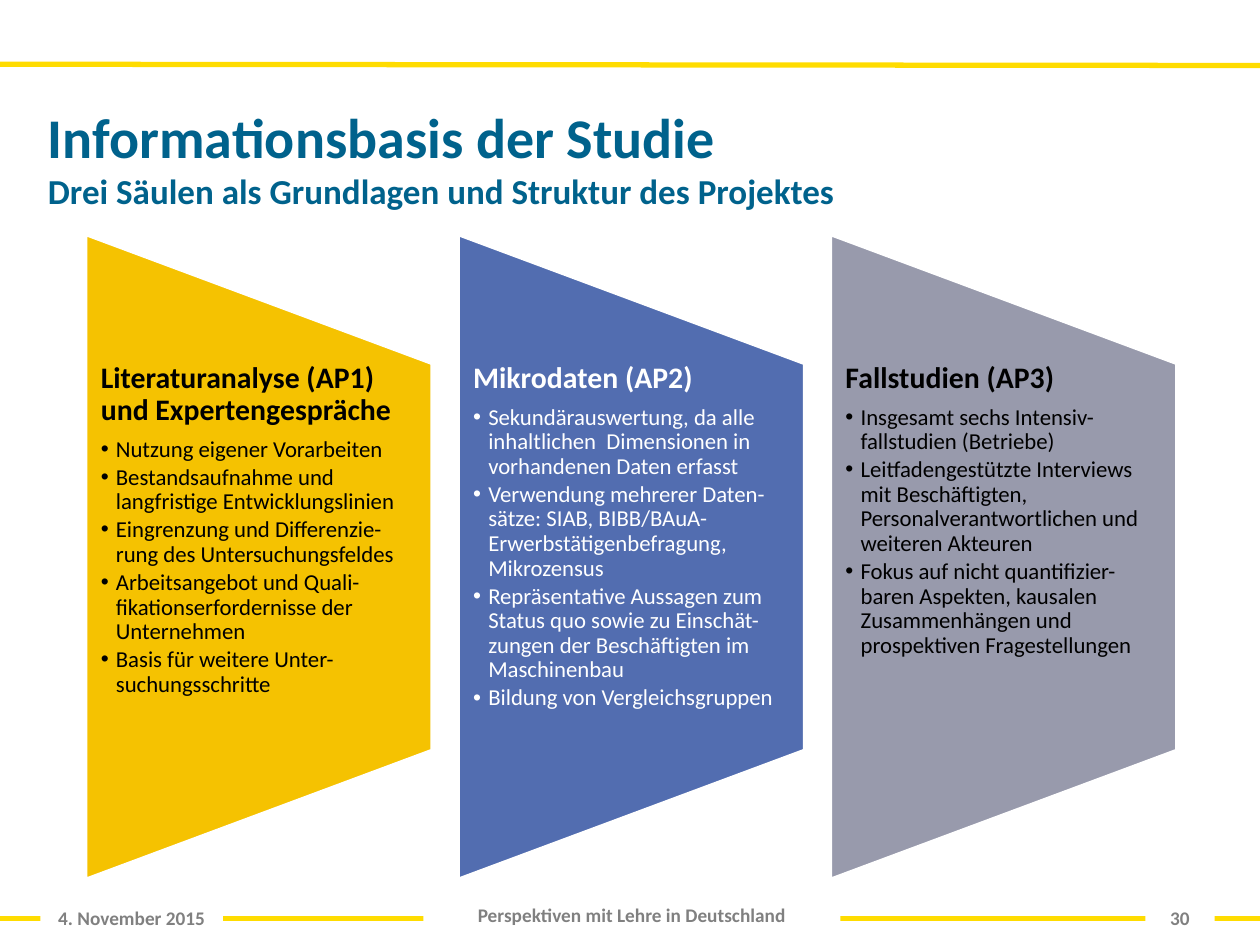
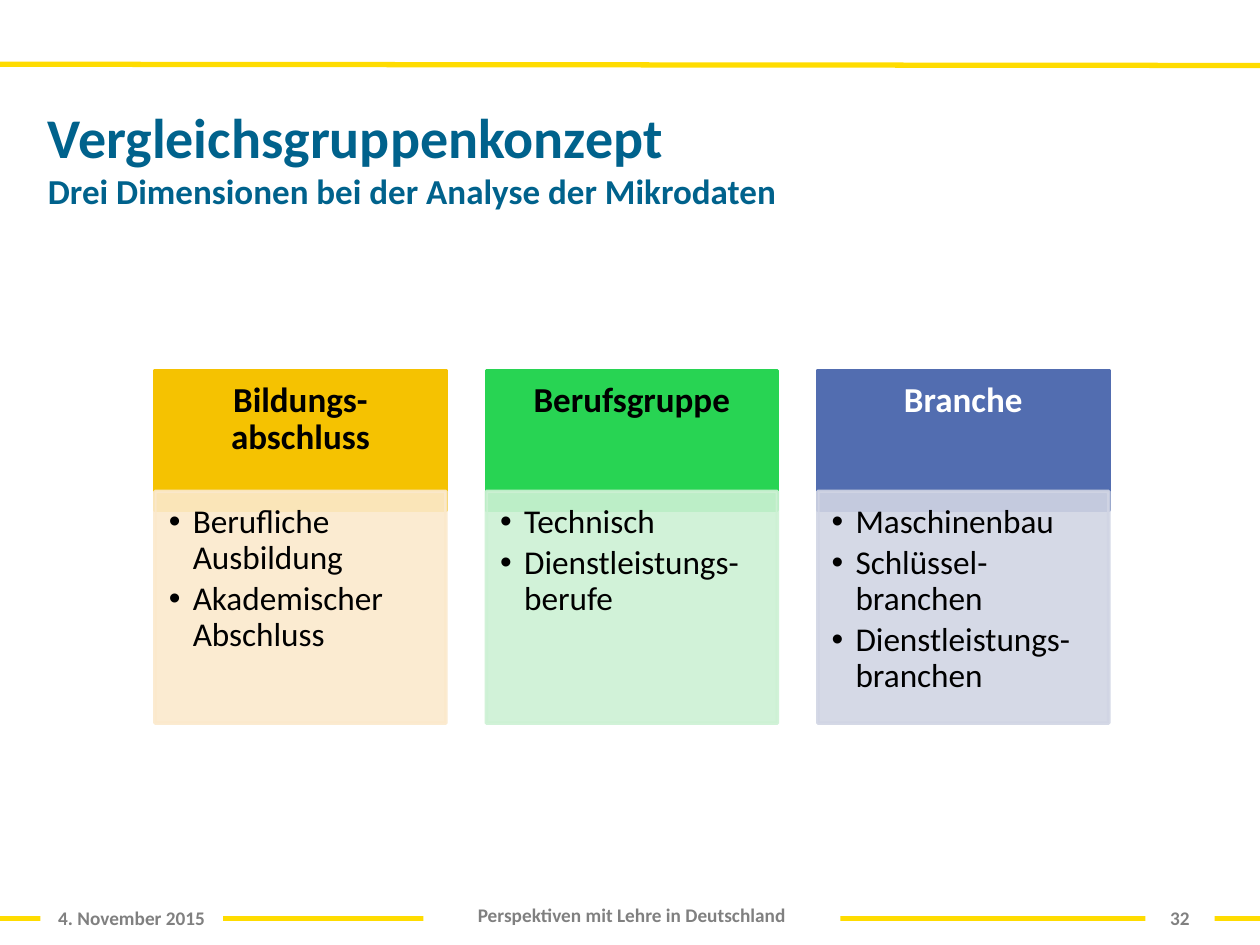
"""Build two slides on the basis and the comparison groups of a study."""
from lxml import etree
from pptx import Presentation
from pptx.dml.color import RGBColor
from pptx.enum.shapes import MSO_CONNECTOR, MSO_SHAPE
from pptx.enum.text import MSO_ANCHOR, MSO_AUTO_SIZE, PP_ALIGN
from pptx.oxml.ns import qn
from pptx.util import Inches, Pt

LEFT, CENTER = PP_ALIGN.LEFT, PP_ALIGN.CENTER
TOP = MSO_ANCHOR.TOP
NO_AUTOFIT = MSO_AUTO_SIZE.NONE
RECTANGLE = MSO_SHAPE.RECTANGLE
PILLAR = MSO_SHAPE.FLOWCHART_MANUAL_OPERATION
STRAIGHT = MSO_CONNECTOR.STRAIGHT

FONT = "Calibri"
BLACK, WHITE, GREY = "000000", "FFFFFF", "808080"
BAND, TITLE = "FFDC00", "00628C"
GOLD, BLUE, SLATE, GREEN = "F5C201", "526DB0", "989AAC", "28D453"
PALE_GOLD, PALE_GREEN, PALE_BLUE = "FBE9CC", "CDF1D4", "D1D5E4"

PILLARS = [
    ("Literaturanalyse (AP1) und Expertengespräche", GOLD, BLACK, [
        "Nutzung eigener Vorarbeiten",
        "Bestandsaufnahme und langfristige Entwicklungslinien",
        "Eingrenzung und Differenzie-rung des Untersuchungsfeldes",
        "Arbeitsangebot und Quali-fikationserfordernisse der Unternehmen",
        "Basis für weitere Unter-suchungsschritte"]),
    ("Mikrodaten (AP2)", BLUE, WHITE, [
        "Sekundärauswertung, da alle inhaltlichen  Dimensionen in vorhandenen Daten erfasst",
        "Verwendung mehrerer Daten-sätze: SIAB, BIBB/BAuA-Erwerbstätigenbefragung, Mikrozensus",
        "Repräsentative Aussagen zum Status quo sowie zu Einschät-zungen der Beschäftigten im Maschinenbau",
        "Bildung von Vergleichsgruppen"]),
    ("Fallstudien (AP3)", SLATE, BLACK, [
        "Insgesamt sechs Intensiv-fallstudien (Betriebe)",
        "Leitfadengestützte Interviews mit Beschäftigten, Personalverantwortlichen und weiteren Akteuren",
        "Fokus auf nicht quantifizier-baren Aspekten, kausalen Zusammenhängen und prospektiven Fragestellungen"]),
]
DIMENSIONS = [
    ("Bildungs-abschluss", GOLD, PALE_GOLD, BLACK,
     ["Berufliche Ausbildung", "Akademischer Abschluss"]),
    ("Berufsgruppe", GREEN, PALE_GREEN, BLACK,
     ["Technisch", "Dienstleistungs-berufe"]),
    ("Branche", BLUE, PALE_BLUE, WHITE,
     ["Maschinenbau", "Schlüssel-branchen", "Dienstleistungs-branchen"]),
]


def color(value):
    """Turn a hex string into a colour."""
    return RGBColor.from_string(value)


def style_span(span, size, ink, bold=False):
    """Set the font of one run."""
    span.font.name = FONT
    span.font.size = Pt(size)
    span.font.bold = bold
    span.font.color.rgb = color(ink)


def prepare_frame(frame, insets):
    """Make a text frame wrap from the top with left, top, right, bottom insets."""
    frame.word_wrap = True
    frame.auto_size = NO_AUTOFIT
    frame.vertical_anchor = TOP
    (frame.margin_left, frame.margin_top,
     frame.margin_right, frame.margin_bottom) = map(Inches, insets)


def style_para(para, size, ink, bold=False, align=LEFT, after=0, indent=0):
    """Format a paragraph, with a bullet when an indent is given."""
    if indent:
        props = para._p.get_or_add_pPr()
        props.set("marL", str(Inches(indent)))
        props.set("indent", str(-Inches(indent)))
        etree.SubElement(props, qn("a:buFont")).set("typeface", "Arial")
        etree.SubElement(props, qn("a:buChar")).set("char", "•")
    para.alignment = align
    if after:
        para.line_spacing = 0.9
        para.space_after = Pt(size * after)
    for span in para.runs:
        style_span(span, size, ink, bold)


def add_block(page, kind, place, fill, edge=None):
    """Add a filled preset shape without shadow."""
    block = page.shapes.add_shape(kind, *map(Inches, place))
    block.shadow.inherit = False
    block.fill.solid()
    block.fill.fore_color.rgb = color(fill)
    if edge:
        block.line.color.rgb = color(edge)
        block.line.width = Pt(2)
    else:
        block.line.fill.background()
    return block


def make_translucent(block, percent):
    """Set the opacity of the fill and line of a shape."""
    for tint in block._element.spPr.iter(qn("a:srgbClr")):
        etree.SubElement(tint, qn("a:alpha")).set("val", str(percent * 1000))


def add_band(page, start, end):
    """Draw a yellow line across the page."""
    band = page.shapes.add_connector(
        STRAIGHT, Inches(0), Inches(start), Inches(10), Inches(end))
    band.line.color.rgb = color(BAND)
    band.line.width = Pt(3)
    etree.SubElement(band._element.spPr, qn("a:effectLst"))


def add_footer(page, text, place):
    """Add a white footer label that interrupts the lower band."""
    label = add_block(page, RECTANGLE, place, WHITE)
    prepare_frame(label.text_frame, (0.1, 0.05, 0.1, 0.05))
    label.text_frame.text = text
    style_para(label.text_frame.paragraphs[0], 11, GREY, True, CENTER)


def add_page(deck, heading, subheading, number):
    """Add a page with bands, footers and a two-line title."""
    page = deck.slides.add_slide(deck.slide_layouts[5])
    add_band(page, 7.29, 7.29)
    add_band(page, 0.51, 0.52)
    add_footer(page, "4. November 2015", (0.32, 7.14, 1.45, 0.24))
    add_footer(page, "Perspektiven mit Lehre in Deutschland", (3.36, 7.12, 3.31, 0.25))
    add_footer(page, number, (9.09, 7.14, 0.55, 0.24))
    title = page.shapes.title
    title.left, title.top, title.width, title.height = map(
        Inches, (0.28, 0.76, 9.45, 1.1))
    prepare_frame(title.text_frame, (0.1, 0.05, 0.1, 0.05))
    title.text_frame.text = f"{heading}\v{subheading}"
    para = title.text_frame.paragraphs[0]
    para.alignment = LEFT
    for span, size in zip(para.runs, (32, 20)):
        style_span(span, size, TITLE, True)
    return page


def add_pillar(page, left, heading, fill, ink, points):
    """Add a tapering pillar with a heading and bullet points."""
    width, length, middle = 2.75, 5.12, 4.42
    place = (left + (width - length) / 2, middle - width / 2, length, width)
    add_block(page, PILLAR, place, fill, WHITE).rotation = 270
    box = page.shapes.add_textbox(*map(Inches, (left, 2.88, width, 3.07)))
    frame = box.text_frame
    prepare_frame(frame, (0.12, 0, 0.12, 0))
    frame.text = "\n".join([heading, *points])
    style_para(frame.paragraphs[0], 17, ink, True, after=0.35)
    for para in frame.paragraphs[1:]:
        style_para(para, 13, ink, after=0.15, indent=0.12)


def add_dimension(page, left, heading, fill, pale, ink, points):
    """Add a header block and the translucent list that overlaps it."""
    header = add_block(page, RECTANGLE, (left, 2.94, 2.31, 1.11), fill, fill)
    prepare_frame(header.text_frame, (0.16, 0.09, 0.16, 0.09))
    header.text_frame.text = heading
    style_para(header.text_frame.paragraphs[0], 20, ink, True, CENTER, 0.35)
    body = add_block(page, RECTANGLE, (left, 3.9, 2.31, 1.84), pale, pale)
    make_translucent(body, 90)
    prepare_frame(body.text_frame, (0.11, 0.11, 0.15, 0.17))
    body.text_frame.text = "\n".join(points)
    for para in body.text_frame.paragraphs:
        style_para(para, 19, BLACK, after=0.15, indent=0.19)


def main():
    """Build and save the deck."""
    deck = Presentation()
    deck.slide_width, deck.slide_height = Inches(10), Inches(7.5)

    page = add_page(deck, "Informationsbasis der Studie",
                    "Drei Säulen als Grundlagen und Struktur des Projektes", "30")
    first, last = 0.68, 6.59
    for index, pillar in enumerate(PILLARS):
        add_pillar(page, first + index * (last - first) / 2, *pillar)

    page = add_page(deck, "Vergleichsgruppenkonzept",
                    "Drei Dimensionen bei der Analyse der Mikrodaten", "32")
    for index, dimension in enumerate(DIMENSIONS):
        add_dimension(page, 1.23 + index * 2.63, *dimension)

    deck.save("out.pptx")


if __name__ == "__main__":
    main()
